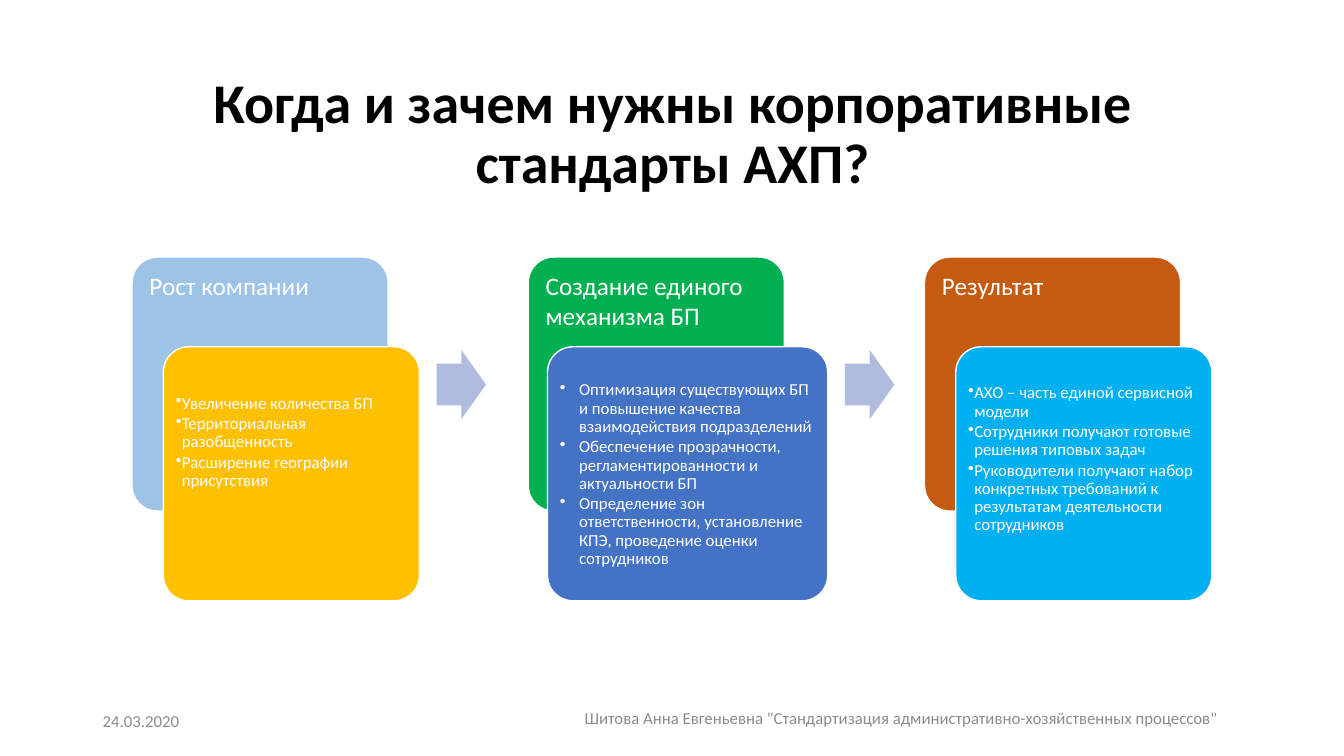
from dataclasses import dataclass

from lxml import etree
from pptx import Presentation
from pptx.dml.color import RGBColor
from pptx.enum.shapes import MSO_SHAPE
from pptx.enum.text import MSO_ANCHOR, MSO_AUTO_SIZE, PP_ALIGN
from pptx.oxml.ns import qn
from pptx.util import Inches, Pt

ROUNDED = MSO_SHAPE.ROUNDED_RECTANGLE
ARROW = MSO_SHAPE.RIGHT_ARROW
TOP, MIDDLE = MSO_ANCHOR.TOP, MSO_ANCHOR.MIDDLE
LEFT, CENTER = PP_ALIGN.LEFT, PP_ALIGN.CENTER
NO_AUTOFIT = MSO_AUTO_SIZE.NONE

FONT = "Calibri"
COLORS = {
    "title": "000000",
    "footer": "8C8C8C",
    "white": "FFFFFF",
    "arrow": "B0BCDE",
    "sky": "9DC3E6",
    "amber": "FFC000",
    "green": "00B050",
    "blue": "4472C4",
    "rust": "C55A11",
    "cyan": "00B0F0",
}

CARD_WIDTH, CARD_HEIGHT = 2.54, 2.52
STAGE_LEFT, STAGE_TOP, STAGE_PITCH = 1.31, 2.55, 3.93
DETAIL_CENTER, DETAIL_DROP = 1.58, 0.89
ARROW_GAP, ARROW_DROP = 0.17, 0.92


@dataclass
class Stage:
    heading: str
    heading_color: str
    details: list
    detail_color: str
    detail_width: float = CARD_WIDTH
    top_inset: float = 0.3
    indent: float = 0.06


STAGES = [
    Stage(
        "Рост компании", "sky",
        ["Увеличение количества БП",
         "Территориальная разобщенность",
         "Расширение географии присутствия"],
        "amber", top_inset=0.4,
    ),
    Stage(
        "Создание единого механизма БП", "green",
        ["Оптимизация существующих БП и повышение качества взаимодействия подразделений",
         "Обеспечение прозрачности, регламентированности и актуальности БП",
         "Определение зон ответственности, установление КПЭ, проведение оценки сотрудников"],
        "blue", detail_width=2.78, top_inset=0.27, indent=0.19,
    ),
    Stage(
        "Результат", "rust",
        ["АХО – часть единой сервисной модели",
         "Сотрудники получают готовые решения типовых задач",
         "Руководители получают набор конкретных требований к результатам деятельности сотрудников"],
        "cyan",
    ),
]


def color(name):
    return RGBColor.from_string(COLORS[name])


def write(paragraph, text, size, color_name, align=LEFT, bold=False):
    paragraph.alignment = align
    run = paragraph.add_run()
    run.text = text
    run.font.name = FONT
    run.font.size = Pt(size)
    run.font.bold = bold
    run.font.color.rgb = color(color_name)


def add_bullet(paragraph, indent):
    properties = paragraph._p.get_or_add_pPr()
    properties.set("marL", str(Inches(indent)))
    properties.set("indent", str(-Inches(indent)))
    etree.SubElement(properties, qn("a:buChar")).set("char", "•")


def add_solid(slide, kind, box, fill, adjustments):
    solid = slide.shapes.add_shape(kind, *map(Inches, box))
    solid.shadow.inherit = False
    solid.fill.solid()
    solid.fill.fore_color.rgb = color(fill)
    solid.line.fill.background()
    for index, value in enumerate(adjustments):
        solid.adjustments[index] = value
    return solid


def add_card(slide, box, fill, side_inset, top_inset):
    card = add_solid(slide, ROUNDED, box, fill, [0.1])
    card.line.color.rgb = color("white")
    card.line.width = Pt(1)
    frame = card.text_frame
    frame.word_wrap = True
    frame.vertical_anchor = TOP
    frame.margin_left = frame.margin_right = Inches(side_inset)
    frame.margin_top = Inches(top_inset)
    frame.margin_bottom = Inches(0.05)
    return frame


def add_title(slide, box):
    title = slide.shapes.title
    title.left, title.top, title.width, title.height = map(Inches, box)
    frame = title.text_frame
    frame.auto_size = NO_AUTOFIT
    frame.word_wrap = True
    frame.vertical_anchor = MIDDLE
    heading = frame.paragraphs[0]
    heading.line_spacing = 0.9
    write(heading, "Когда и зачем нужны корпоративные стандарты АХП?", 40, "title", CENTER, True)


def add_stage(slide, left, top, stage):
    heading = add_card(slide, (left, top, CARD_WIDTH, CARD_HEIGHT), stage.heading_color, 0.1, 0.06)
    write(heading.paragraphs[0], stage.heading, 18, "white")

    detail_left = left + DETAIL_CENTER - stage.detail_width / 2
    detail_box = (detail_left, top + DETAIL_DROP, stage.detail_width, CARD_HEIGHT)
    details = add_card(slide, detail_box, stage.detail_color, 0.05, stage.top_inset)
    for index, detail in enumerate(stage.details):
        item = details.paragraphs[0] if index == 0 else details.add_paragraph()
        item.line_spacing = 0.9
        item.space_after = Pt(1.8)
        write(item, detail, 12, "white")
        add_bullet(item, stage.indent)
    return detail_left + stage.detail_width


def add_process(slide, left, top):
    for index, stage in enumerate(STAGES):
        right = add_stage(slide, left + index * STAGE_PITCH, top, stage)
        if index < len(STAGES) - 1:
            arrow_box = (right + ARROW_GAP, top + ARROW_DROP, 0.49, 0.69)
            add_solid(slide, ARROW, arrow_box, "arrow", [0.6, 0.5])


def add_footer(slide, box, text, align):
    frame = slide.shapes.add_textbox(*map(Inches, box)).text_frame
    frame.word_wrap = True
    frame.vertical_anchor = MIDDLE
    write(frame.paragraphs[0], text, 12, "footer", align)


def main():
    deck = Presentation()
    deck.slide_width, deck.slide_height = Inches(13.33), Inches(7.5)
    slide = deck.slides.add_slide(deck.slide_layouts[5])
    add_title(slide, (0.92, 0.62, 11.5, 1.45))
    add_footer(slide, (0.92, 6.95, 3, 0.4), "24.03.2020", LEFT)
    add_footer(
        slide, (5.46, 6.92, 6.96, 0.4),
        'Шитова Анна Евгеньевна "Стандартизация административно-хозяйственных процессов"', CENTER,
    )
    add_process(slide, STAGE_LEFT, STAGE_TOP)
    deck.save("out.pptx")


if __name__ == "__main__":
    main()
